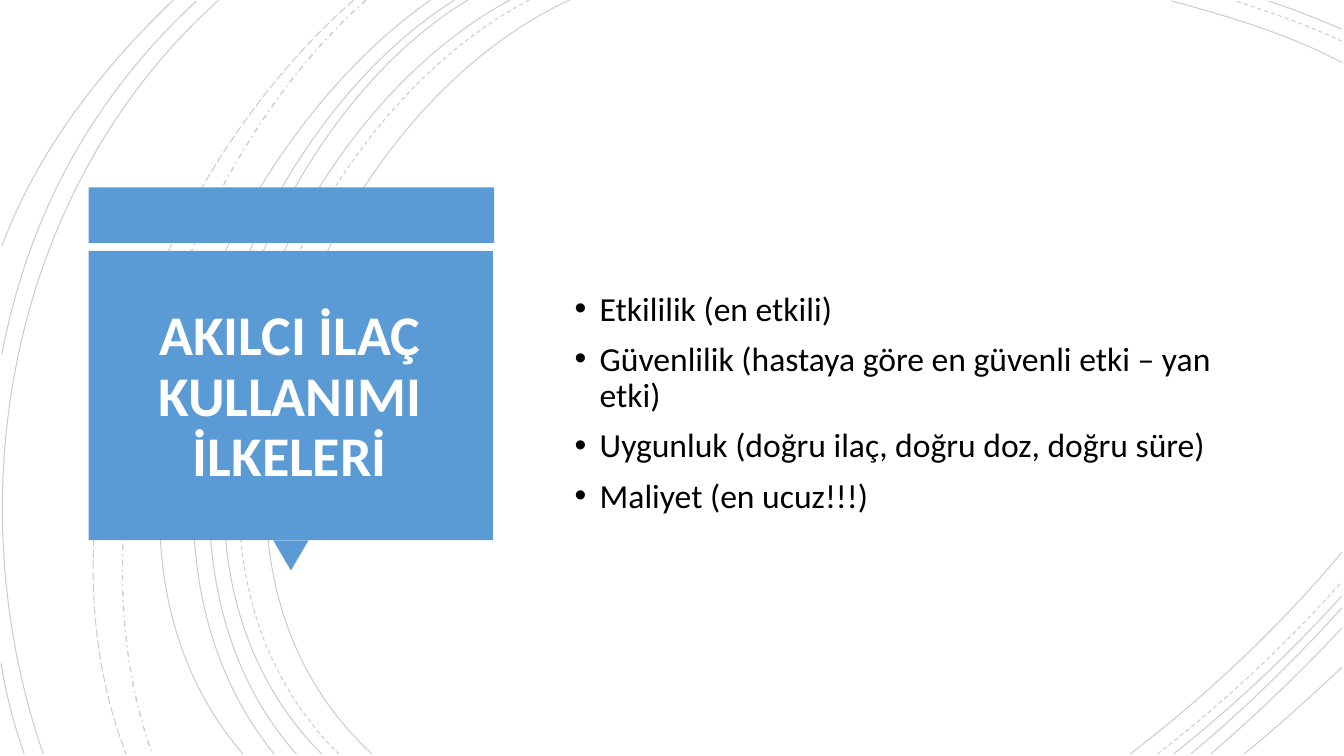
from lxml import etree
from pptx import Presentation
from pptx import util as u
from pptx.dml import color
from pptx.enum import dml, shapes, text
from pptx.oxml import ns

INK = {"blue": "5B9BD5", "white": "FFFFFF", "black": "000000"}
FONT = "Calibri"
SOLID, DASH = dml.MSO_LINE.SOLID, dml.MSO_LINE.DASH
DOT, LONG = dml.MSO_LINE.DASH_DOT, dml.MSO_LINE.LONG_DASH
COLS, ROWS = 13.33, 7.5
LEFT, RIGHT, FOOT = 0.02, 13.31, 7.48

# Top x, two control points, foot x, dash, width
SWEEPS = [
    (5.65, (3.15, 1.15), (1.43, 5.4), 3.69, SOLID, 0.75),
    (5.25, (2.85, 1.25), (1.23, 5.37), 3.36, DASH, 0.75),
    (5.06, (2.7, 1.27), (1.1, 5.37), 3.19, SOLID, 0.75),
    (4.64, (2.44, 1.33), (1.1, 5.41), 2.94, SOLID, 0.75),
    (4.51, (2.31, 1.38), (0.97, 5.33), 2.72, SOLID, 0.75),
    (4.27, (2.17, 1.47), (0.53, 5.29), 2.41, SOLID, 0.75),
    (3.63, (1.76, 1.66), (0.65, 5.09), 1.51, DOT, 1),
    (3.51, (1.57, 1.69), (0.29, 4.99), 1.25, LONG, 0.75),
    (2.17, (0.11, 1.85), (-0.46, 4.9), 0.43, SOLID, 0.75),
]
# Right-edge y, two control points, top x, dash
TOPS = [
    (0.62, (12.78, 0.34), (12.18, 0.16), 11.62, SOLID),
    (0.41, (12.97, 0.25), (12.6, 0.12), 12.25, DASH),
    (0.29, (13.07, 0.19), (12.83, 0.09), 12.58, SOLID),
]
# Foot x, two control points, right-edge y, dash
FEET = [
    (11.21, (11.97, 6.9), (12.69, 6.22), 5.48, SOLID),
    (11.48, (12.13, 6.98), (12.75, 6.4), 5.77, DASH),
    (11.64, (12.23, 7.01), (12.8, 6.48), 5.91, SOLID),
    (11.81, (12.34, 7.04), (12.84, 6.55), 6.03, SOLID),
    (12.01, (12.46, 7.09), (12.9, 6.67), 6.23, SOLID),
    (12.34, (12.67, 7.21), (12.99, 6.92), 6.62, SOLID),
]
EDGES = [
    [(1.95, 0.01), (0.92, 0.96), (0.28, 2.14), (LEFT, 3.51)],
    [(0.01, 6.58), (0.06, 6.89), (0.14, 7.19), (0.24, FOOT)],
    [(1.72, 0), (1, 0.69), (0.37, 1.5), (LEFT, 2.44)],
]
TITLE = "AKILCI İLAÇ KULLANIMI İLKELERİ"
POINTS = [
    "Etkililik (en etkili)",
    "Güvenlilik (hastaya göre en güvenli etki – yan etki)",
    "Uygunluk (doğru ilaç, doğru doz, doğru süre)",
    "Maliyet (en ucuz!!!)",
]


def hue(name):
    return color.RGBColor.from_string(INK[name])


class Page:
    """Draws on one slide; lengths are columns and rows of a square grid."""

    def __init__(self, deck):
        self.cell = deck.slide_height / ROWS
        self.items = deck.slides.add_slide(deck.slide_layouts[6]).shapes

    def span(self, *cells):
        return [round(n * self.cell) for n in cells]

    def group(self):
        return self.items.add_group_shape().shapes

    def curve(self, host, pts, dash=SOLID, width=0.75):
        """Draw one cubic curve: start, two control points, end."""
        start, *rest = [self.span(*p) for p in pts]
        pen = host.build_freeform(*start)
        pen.add_line_segments(rest, close=False)
        arc = pen.convert_to_shape()
        arc.shadow.inherit = False
        arc.fill.background()
        arc.line.color.rgb = hue("black")
        arc.line.width = u.Pt(width)
        arc.line.dash_style = dash
        tint = arc.line._get_or_add_ln().find(".//" + ns.qn("a:srgbClr"))
        etree.SubElement(tint, ns.qn("a:alpha"), val="20000")
        route = arc._element.find(".//" + ns.qn("a:path"))
        bend = etree.SubElement(route, ns.qn("a:cubicBezTo"))
        for step in route.findall(ns.qn("a:lnTo")):
            bend.append(step[0])
            route.remove(step)

    def block(self, host, kind, box, turn=0):
        form = host.add_shape(kind, *self.span(*box))
        form.shadow.inherit = False
        form.fill.solid()
        form.fill.fore_color.rgb = hue("blue")
        form.line.fill.background()
        form.rotation = turn

    def words(self, box, lines, size, ink, bold=False, align=None):
        frame = self.items.add_textbox(*self.span(*box)).text_frame
        frame.word_wrap = True
        frame.vertical_anchor = text.MSO_ANCHOR.MIDDLE
        frame.text = "\n".join(lines)
        for para in frame.paragraphs:
            para.alignment = align
            para.line_spacing = 0.9
            font = para.runs[0].font
            font.name, font.size, font.bold = FONT, u.Pt(size), bold
            font.color.rgb = hue(ink)
        return frame

    def bullets(self, box, lines, size, ink, drop):
        """List whose top inset is widened by drop rows."""
        frame = self.words(box, lines, size, ink)
        frame.margin_top += self.span(drop)[0]
        indent = self.span(0.25)[0]
        for para in frame.paragraphs:
            para.space_before = u.Pt(10)
            props = para._p.get_or_add_pPr()
            props.set("marL", str(indent))
            props.set("indent", str(-indent))
            etree.SubElement(props, ns.qn("a:buFont"), typeface="Arial")
            etree.SubElement(props, ns.qn("a:buChar"), char="•")


def main():
    deck = Presentation()
    deck.slide_width, deck.slide_height = u.Inches(COLS), u.Inches(ROWS)
    page = Page(deck)

    arcs = page.group()
    for top, one, two, foot, dash, width in SWEEPS:
        page.curve(arcs, [(top, 0), one, two, (foot, FOOT)], dash, width)
    for side, one, two, top, dash in TOPS:
        page.curve(arcs, [(RIGHT, side), one, two, (top, 0.01)], dash)
    for foot, one, two, side, dash in FEET:
        page.curve(arcs, [(foot, FOOT), one, two, (RIGHT, side)], dash)
    for pts in EDGES:
        page.curve(arcs, pts)

    sign = page.group()
    kind = shapes.MSO_SHAPE
    page.block(sign, kind.RECTANGLE, (0.88, 1.86, 4.02, 0.55))
    page.block(sign, kind.ISOSCELES_TRIANGLE, (2.71, 5.36, 0.35, 0.3), 180)
    page.block(sign, kind.RECTANGLE, (0.88, 2.49, 4.01, 2.87))

    page.words((0.99, 2.64, 3.77, 2.62), [TITLE], 40, "white", True,
               text.PP_ALIGN.CENTER)
    page.bullets((5.6, 0.88, 6.87, 5.74), POINTS, 24, "black", 0.51)
    deck.save("out.pptx")


if __name__ == "__main__":
    main()
